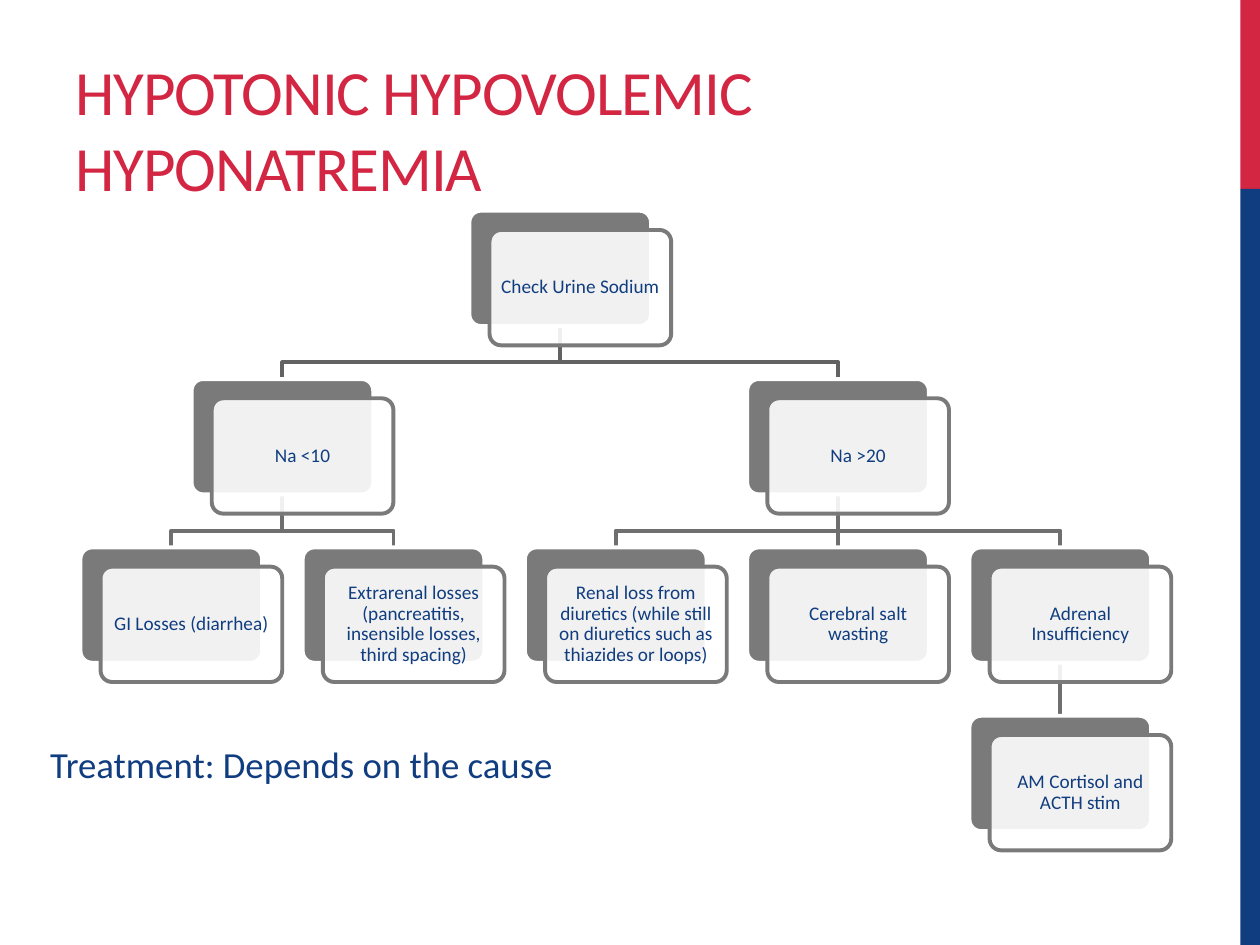
from dataclasses import dataclass
from typing import Optional

from lxml import etree
from pptx import Presentation
from pptx.dml.color import RGBColor
from pptx.enum import shapes, text
from pptx.oxml.ns import qn
from pptx.util import Pt


@dataclass(frozen=True)
class Theme:
    font: str = "Calibri"
    red: str = "D22643"
    blue: str = "103D80"
    white: str = "FFFFFF"
    card: str = "7A7A7A"
    top_link: str = "626262"
    link: str = "6F6F6F"
    title_size: float = 36
    note_size: float = 21
    card_size: float = 11
    line: float = 2.25


@dataclass(frozen=True)
class Grid:
    left: float = 46
    top: float = 120.4
    col_step: float = 127
    row_step: float = 96.2
    width: float = 103.8
    height: float = 65.9
    shift_x: float = 11.5
    shift_y: float = 11
    elbow: float = 20.7


@dataclass(frozen=True)
class Node:
    label: str
    col: float
    row: int
    parent: Optional[int] = None

    @property
    def x(self) -> float:
        return GRID.left + self.col * GRID.col_step

    @property
    def y(self) -> float:
        return GRID.top + self.row * GRID.row_step

    @property
    def center(self) -> float:
        return self.x + GRID.width / 2

    @property
    def bottom(self) -> float:
        return self.y + GRID.height


THEME = Theme()
GRID = Grid()
NODES = [
    Node("Check Urine Sodium", 1.75, 0),
    Node("Na <10", 0.5, 1, 0),
    Node("Na >20", 3, 1, 0),
    Node("GI Losses (diarrhea)", 0, 2, 1),
    Node("Extrarenal losses (pancreatitis, insensible losses, third spacing)", 1, 2, 1),
    Node("Renal loss from diuretics (while still on diuretics such as "
         "thiazides or loops)", 2, 2, 2),
    Node("Cerebral salt wasting", 3, 2, 2),
    Node("Adrenal Insufficiency", 4, 2, 2),
    Node("AM Cortisol and ACTH stim", 4, 3, 7),
]


def write(sp, content: str, *, size: float, color: str, align=text.PP_ALIGN.LEFT,
          anchor=text.MSO_ANCHOR.TOP, spacing: Optional[float] = None,
          inset: Optional[float] = None, tracking: Optional[float] = None) -> None:
    tf = sp.text_frame
    tf.word_wrap = True
    tf.auto_size = text.MSO_AUTO_SIZE.NONE
    tf.vertical_anchor = anchor
    if inset is not None:
        tf.margin_left = tf.margin_right = tf.margin_top = tf.margin_bottom = Pt(inset)
    p = tf.paragraphs[0]
    p.alignment = align
    if spacing is not None:
        p.line_spacing = spacing
    r = p.add_run()
    r.text = content
    r.font.name = THEME.font
    r.font.size = Pt(size)
    r.font.color.rgb = RGBColor.from_string(color)
    if tracking is not None:
        r.font._element.set("spc", str(round(tracking * 100)))


def add_box(slide, kind, x: float, y: float, w: float, h: float, fill: str,
            line: Optional[str] = None, opacity: Optional[int] = None):
    sp = slide.shapes.add_shape(kind, Pt(x), Pt(y), Pt(w), Pt(h))
    sp.shadow.inherit = False
    sp.fill.solid()
    sp.fill.fore_color.rgb = RGBColor.from_string(fill)
    if line:
        sp.line.color.rgb = RGBColor.from_string(line)
        sp.line.width = Pt(THEME.line)
    else:
        sp.line.fill.background()
    if opacity is not None:
        color = sp.fill._xPr.find(f"{qn('a:solidFill')}/{qn('a:srgbClr')}")
        etree.SubElement(color, qn("a:alpha"), val=str(opacity * 1000))
    return sp


def add_card(slide, node: Node):
    kind = shapes.MSO_SHAPE.ROUNDED_RECTANGLE
    back = add_box(slide, kind, node.x, node.y, GRID.width, GRID.height,
                   THEME.card, THEME.white)
    front = add_box(slide, kind, node.x + GRID.shift_x, node.y + GRID.shift_y,
                    GRID.width, GRID.height, THEME.white, THEME.card, 90)
    for sp in (back, front):
        sp.adjustments[0] = 0.1
    write(front, node.label, size=THEME.card_size, color=THEME.blue,
          align=text.PP_ALIGN.CENTER, anchor=text.MSO_ANCHOR.MIDDLE,
          spacing=0.9, inset=3.6)
    return back


def add_link(slide, parent: Node, child: Node, parent_sp, child_sp):
    start, end = (parent.center, parent.bottom), (child.center, child.y)
    if parent.col == child.col:
        link = slide.shapes.add_connector(
            shapes.MSO_CONNECTOR.STRAIGHT, *(Pt(v) for v in start + end))
        link.begin_connect(parent_sp, 2)
        link.end_connect(child_sp, 0)
        etree.SubElement(link._element.spPr, qn("a:effectLst"))
    else:
        bend = parent.bottom + GRID.elbow
        points = [(start[0], bend), (end[0], bend), end]
        builder = slide.shapes.build_freeform(Pt(start[0]), Pt(start[1]))
        builder.add_line_segments([(Pt(x), Pt(y)) for x, y in points], close=False)
        link = builder.convert_to_shape()
        link.shadow.inherit = False
        link.fill.background()
    color = THEME.link if parent.row else THEME.top_link
    link.line.color.rgb = RGBColor.from_string(color)
    link.line.width = Pt(THEME.line)
    return link


def add_tree(slide) -> None:
    cards = [add_card(slide, node) for node in NODES]
    for node, card in zip(NODES, cards):
        if node.parent is not None:
            link = add_link(slide, NODES[node.parent], node, cards[node.parent], card)
            cards[0].element.addprevious(link.element)


def main() -> None:
    prs = Presentation()
    prs.slide_width, prs.slide_height = Pt(720), Pt(540)
    slide = prs.slides.add_slide(prs.slide_layouts[5])

    for y, h, color in ((0, 108, THEME.red), (108, 432, THEME.blue)):
        add_box(slide, shapes.MSO_SHAPE.RECTANGLE, 708.75, y, 11.25, h, color)

    title = slide.shapes.title
    title.left, title.top, title.width, title.height = Pt(36), Pt(12), Pt(456), Pt(108)
    write(title, "HYPOTONIC HYPOVOLEMIC HYPONATREMIA", size=THEME.title_size,
          color=THEME.red, anchor=text.MSO_ANCHOR.BOTTOM, tracking=-0.6)

    add_tree(slide)

    note = slide.shapes.add_textbox(Pt(21.6), Pt(420.5), Pt(401), Pt(32.4))
    write(note, "Treatment: Depends on the cause", size=THEME.note_size, color=THEME.blue)

    prs.save("out.pptx")


if __name__ == "__main__":
    main()
